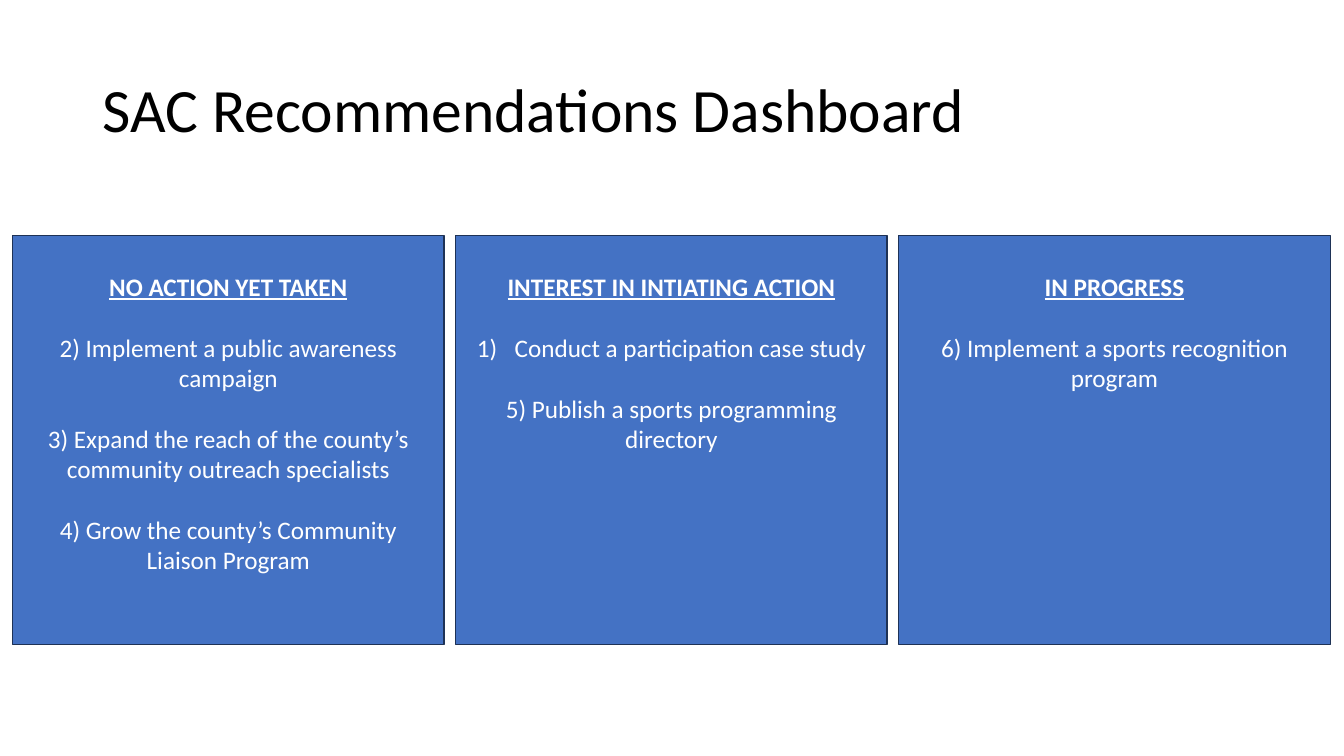
from lxml.etree import SubElement
from pptx import Presentation
from pptx.dml.color import RGBColor
from pptx.enum.shapes import MSO_SHAPE as Shape
from pptx.enum.text import MSO_ANCHOR as Anchor, PP_ALIGN as Align
from pptx.oxml.ns import qn
from pptx.util import Pt

PX = 9525  # EMU per px, 96 px to the inch
FONT = "Calibri"
LINE_GAP = 22  # points: one line of 18 pt text
NUMBER_INDENT = 36

# Each item: text, whether it is numbered automatically
COLUMNS = [
    ("NO ACTION YET TAKEN", [
        ("2) Implement a public awareness campaign", False),
        ("3) Expand the reach of the county’s community outreach specialists", False),
        ("4) Grow the county’s Community Liaison Program", False),
    ]),
    ("INTEREST IN INTIATING ACTION", [
        ("Conduct a participation case study", True),
        ("5) Publish a sports programming directory", False),
    ]),
    ("IN PROGRESS", [
        ("6) Implement a sports recognition program", False),
    ]),
]


def px(length):
    return length * PX


def color(hex_code):
    return RGBColor.from_string(hex_code)


def style(paragraph, size, hex_code, heading=False):
    for run in paragraph.runs:
        font = run.font
        font.name, font.size = FONT, Pt(size)
        font.color.rgb = color(hex_code)
        font.bold = font.underline = heading


def number(paragraph):
    """Number the paragraph 1), with a hanging indent."""
    properties = paragraph._p.get_or_add_pPr()
    properties.set("marL", str(px(NUMBER_INDENT)))
    properties.set("indent", str(-px(NUMBER_INDENT)))
    SubElement(properties, qn("a:buFont"), typeface="+mj-lt")
    SubElement(properties, qn("a:buAutoNum"), type="arabicParenR")


def add_title(slide, box, text):
    frame = slide.shapes.add_textbox(*map(px, box)).text_frame
    frame.word_wrap = True
    frame.vertical_anchor = Anchor.MIDDLE
    title = frame.paragraphs[0]
    title.text = text
    title.line_spacing = 0.9
    style(title, 44, "000000")


def add_status_column(slide, box, heading, items):
    # Panel
    panel = slide.shapes.add_shape(Shape.RECTANGLE, *map(px, box))
    panel.shadow.inherit = False
    panel.fill.solid()
    panel.fill.fore_color.rgb = color("4472C4")
    panel.line.color.rgb = color("1E3256")
    panel.line.width = Pt(1)

    # Heading, one line below the top
    frame = panel.text_frame
    frame.word_wrap = True
    frame.vertical_anchor = Anchor.TOP
    frame.margin_top = px(34)
    title = frame.paragraphs[0]
    title.text = heading
    title.alignment = Align.CENTER
    style(title, 18, "FFFFFF", heading=True)

    # Recommendations, one line apart
    for text, numbered in items:
        recommendation = frame.add_paragraph()
        recommendation.text = text
        recommendation.alignment = Align.CENTER
        recommendation.space_before = Pt(LINE_GAP)
        style(recommendation, 18, "FFFFFF")
        if numbered:
            number(recommendation)


def add_dashboard(slide, box):
    left, top, width, height = box
    gap = 11
    column_width = (width - gap * (len(COLUMNS) - 1)) // len(COLUMNS)
    for index, (heading, items) in enumerate(COLUMNS):
        column_left = left + index * (column_width + gap)
        add_status_column(slide, (column_left, top, column_width, height), heading, items)


def main():
    deck = Presentation()
    deck.slide_width, deck.slide_height = px(1280), px(720)
    slide = deck.slides.add_slide(deck.slide_layouts[6])
    add_title(slide, (88, 38, 1104, 139), "SAC Recommendations Dashboard")
    add_dashboard(slide, (12, 224, 1255, 390))
    deck.save("out.pptx")


if __name__ == "__main__":
    main()
